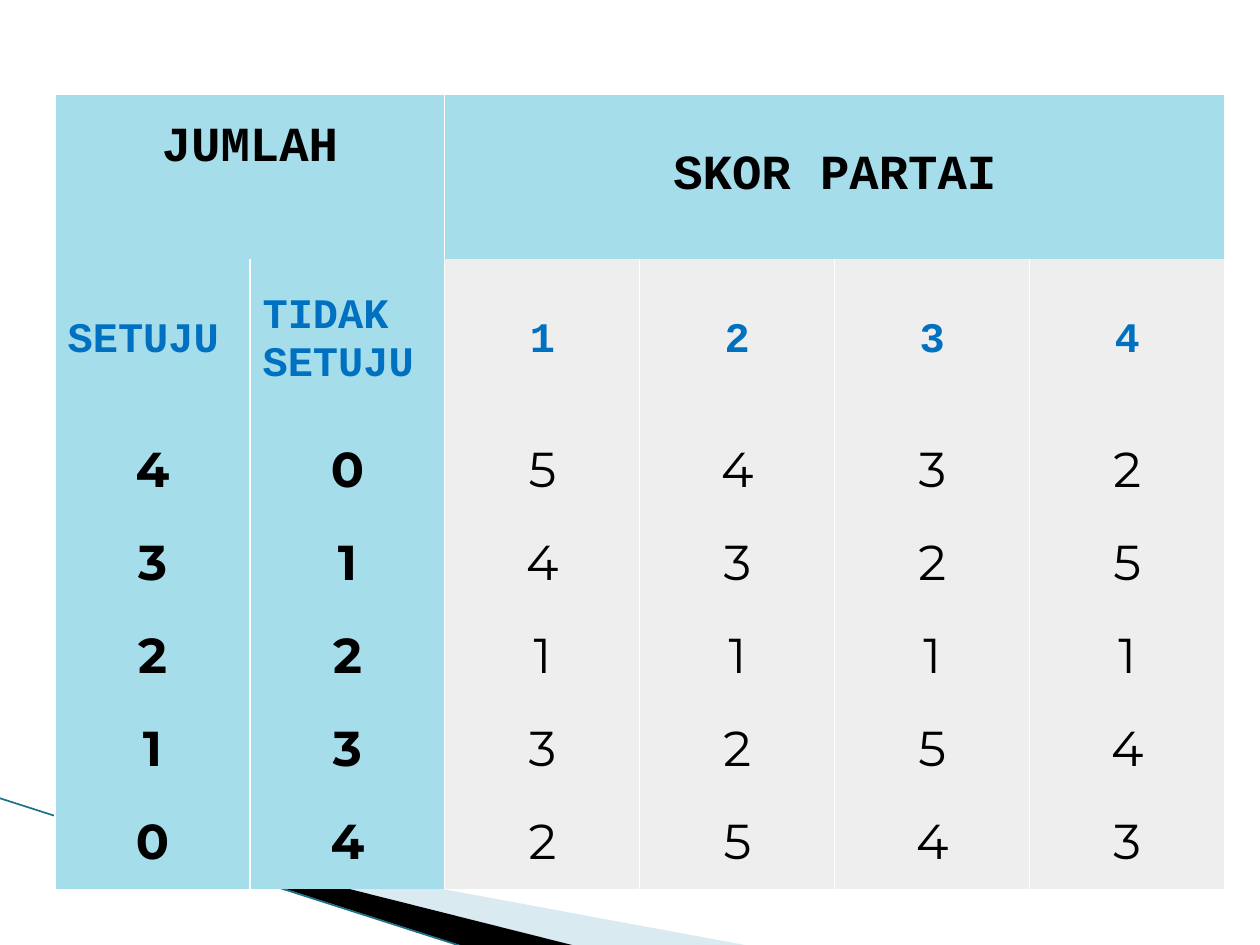
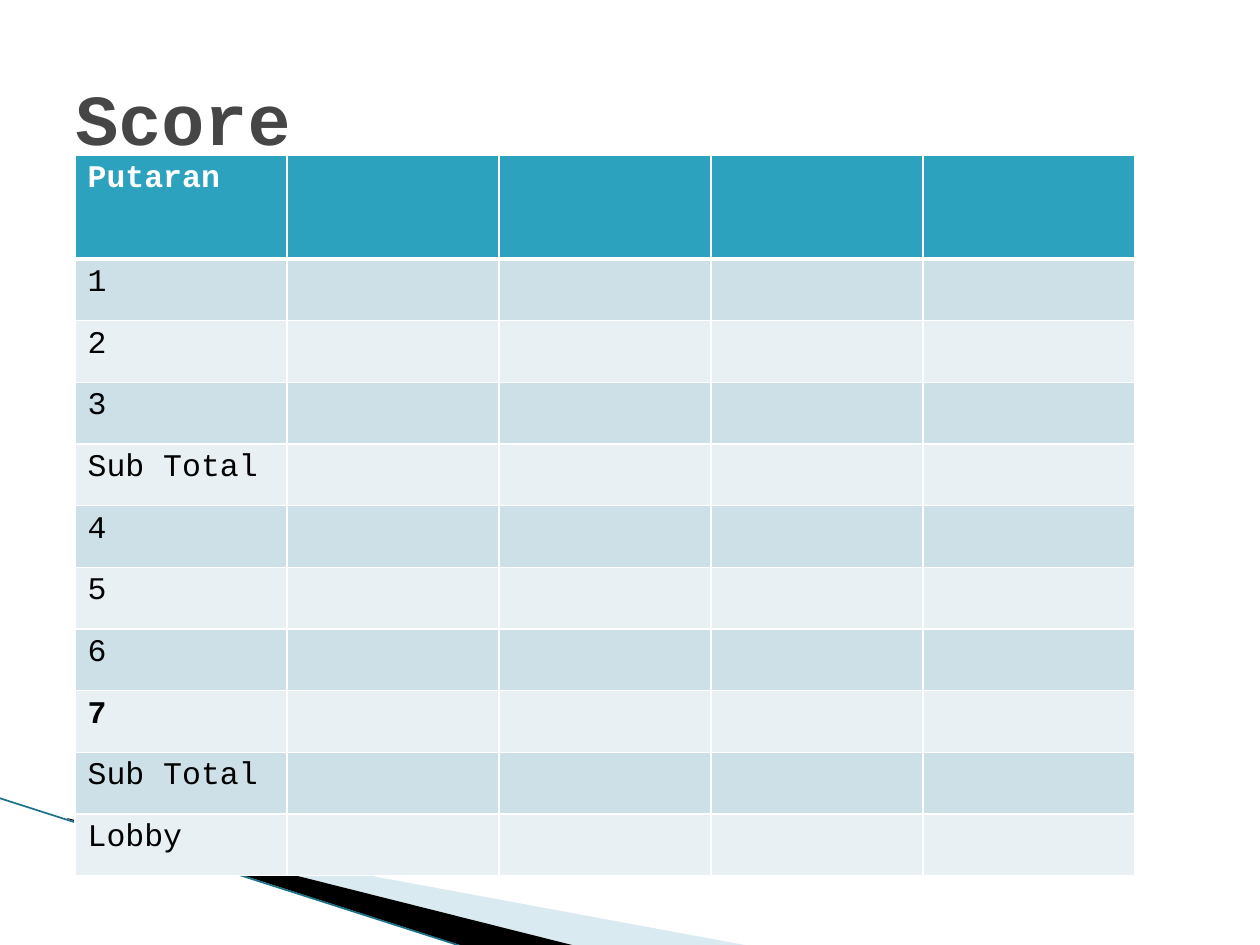
from lxml.etree import SubElement
from pptx import Presentation
from pptx.dml.color import RGBColor
from pptx.enum.shapes import MSO_CONNECTOR
from pptx.enum.text import MSO_ANCHOR as Anchor, PP_ALIGN as Align
from pptx.oxml.ns import qn
from pptx.util import Pt

SCALE = 914400 / 126  # EMU per px
COLORS = {
    "white": "FFFFFF", "black": "000000", "title": "464646",
    "wave": "A0CBDC", "wave_line": "1B7288",
    "tally": "A6DDEA", "score": "EEEEEE", "label": "0070C0",
    "header": "2DA2BF", "band_dark": "CDE0E8", "band_light": "E8F0F4",
}
RGB = {name: RGBColor.from_string(value) for name, value in COLORS.items()}
MONO, SANS = "Courier New", "Montserrat"


def px(length):
    return round(length * SCALE)


def style_cell(cell, text, fill, borders, font, size, color, bold, align=Align.LEFT):
    """Fill a cell and give it white borders; borders maps L, R, T, B to points, 0 for none."""
    properties = cell._tc.get_or_add_tcPr()
    for side, width in borders.items():
        edge = SubElement(properties, qn(f"a:ln{side}"), w=str(Pt(width)))
        if width:
            paint = SubElement(edge, qn("a:solidFill"))
            SubElement(paint, qn("a:srgbClr"), val=COLORS["white"])
        else:
            SubElement(edge, qn("a:noFill"))
    cell.fill.solid()
    cell.fill.fore_color.rgb = RGB[fill]
    cell.text = text
    paragraph = cell.text_frame.paragraphs[0]
    paragraph.alignment = align
    paragraph.font.name, paragraph.font.size = font, Pt(size)
    paragraph.font.color.rgb, paragraph.font.bold = RGB[color], bold


prs = Presentation()
prs.slide_width, prs.slide_height = px(1260), px(945)
blank = prs.slide_layouts[6]
party_slide, score_slide = prs.slides.add_slide(blank), prs.slides.add_slide(blank)

# Corner wave shared by both slides
waves = [
    ("wave", [(69, 820), (750, 946), (575, 946), (69, 819)]),
    ("black", [(67, 818), (576, 946), (469, 948), (68, 819)]),
]
for slide in prs.slides:
    for color, points in waves:
        builder = slide.shapes.build_freeform(*points[0], scale=SCALE)
        builder.add_line_segments(points[1:])
        wave = builder.convert_to_shape()
        wave.shadow.inherit = False
        wave.fill.solid()
        wave.fill.fore_color.rgb = RGB[color]
        wave.line.fill.background()
        if color == "wave":
            tint = wave._element.spPr.find(qn("a:solidFill"))[0]
            SubElement(tint, qn("a:alpha"), val="40000")
    crest = slide.shapes.add_connector(
        MSO_CONNECTOR.STRAIGHT, px(-1), px(798), px(467), px(948))
    crest.line.color.rgb = RGB["wave_line"]
    crest.line.width = Pt(0.95)
    SubElement(crest._element.spPr, qn("a:effectLst"))

# Slide 1: party scores by number of votes
party_rows = [
    ["JUMLAH", "", "SKOR PARTAI", "", "", ""],
    ["SETUJU", "TIDAK SETUJU", "1", "2", "3", "4"],
    ["4", "0", "5", "4", "3", "2"],
    ["3", "1", "4", "3", "2", "5"],
    ["2", "2", "1", "1", "1", "1"],
    ["1", "3", "3", "2", "5", "4"],
    ["0", "4", "2", "5", "4", "3"],
]
party_table = party_slide.shapes.add_table(
    7, 6, px(55), px(95), px(1170), px(794)).table
for column in party_table.columns:
    column.width = px(195)
for r, row in enumerate(party_table.rows):
    row.height = px(164) if r < 2 else px(466) // 5
party_table.cell(0, 0).merge(party_table.cell(0, 1))
party_table.cell(0, 2).merge(party_table.cell(0, 5))
side_borders = {"L": 0.75, "R": 0.75, "T": 0, "B": 0}
for r, texts in enumerate(party_rows):
    for c, text in enumerate(texts):
        cell = party_table.cell(r, c)
        if cell.is_spanned:
            continue
        style_cell(
            cell, text, "tally" if r == 0 or c < 2 else "score", side_borders,
            font=MONO if r < 2 else SANS, size=24 if r == 1 else 28,
            color="label" if r == 1 else "black", bold=r < 2 or c < 2,
            align=Align.LEFT if r == 1 and c < 2 else Align.CENTER)
        cell.vertical_anchor = Anchor.MIDDLE
party_table.cell(0, 0).margin_bottom = px(64)

# Slide 2: score sheet per round
title = score_slide.shapes.add_textbox(px(63), px(38), px(1134), px(158)).text_frame
title.word_wrap = True
title.vertical_anchor = Anchor.MIDDLE
heading = title.paragraphs[0]
heading.text = "Score"
heading.font.name, heading.font.size = MONO, Pt(41)
heading.font.color.rgb, heading.font.bold = RGB["title"], True

rounds = ["Putaran", "1", "2", "3", "Sub Total", "4", "5", "6", "7", "Sub Total", "Lobby"]
score_table = score_slide.shapes.add_table(
    len(rounds), 5, px(75), px(155), px(1060), px(721)).table
for column in score_table.columns:
    column.width = px(212)
for r, label in enumerate(rounds):
    score_table.rows[r].height = px(617) // 10 if r else px(104)
    fill = ("band_dark" if r % 2 else "band_light") if r else "header"
    borders = {"L": 1, "R": 1, "T": 3 if r == 1 else 1, "B": 1 if r else 3}
    for c in range(5):
        style_cell(
            score_table.cell(r, c), "" if c else label, fill, borders,
            font=MONO, size=18, color="black" if r else "white",
            bold=label in ("Putaran", "7"))

prs.save("out.pptx")
